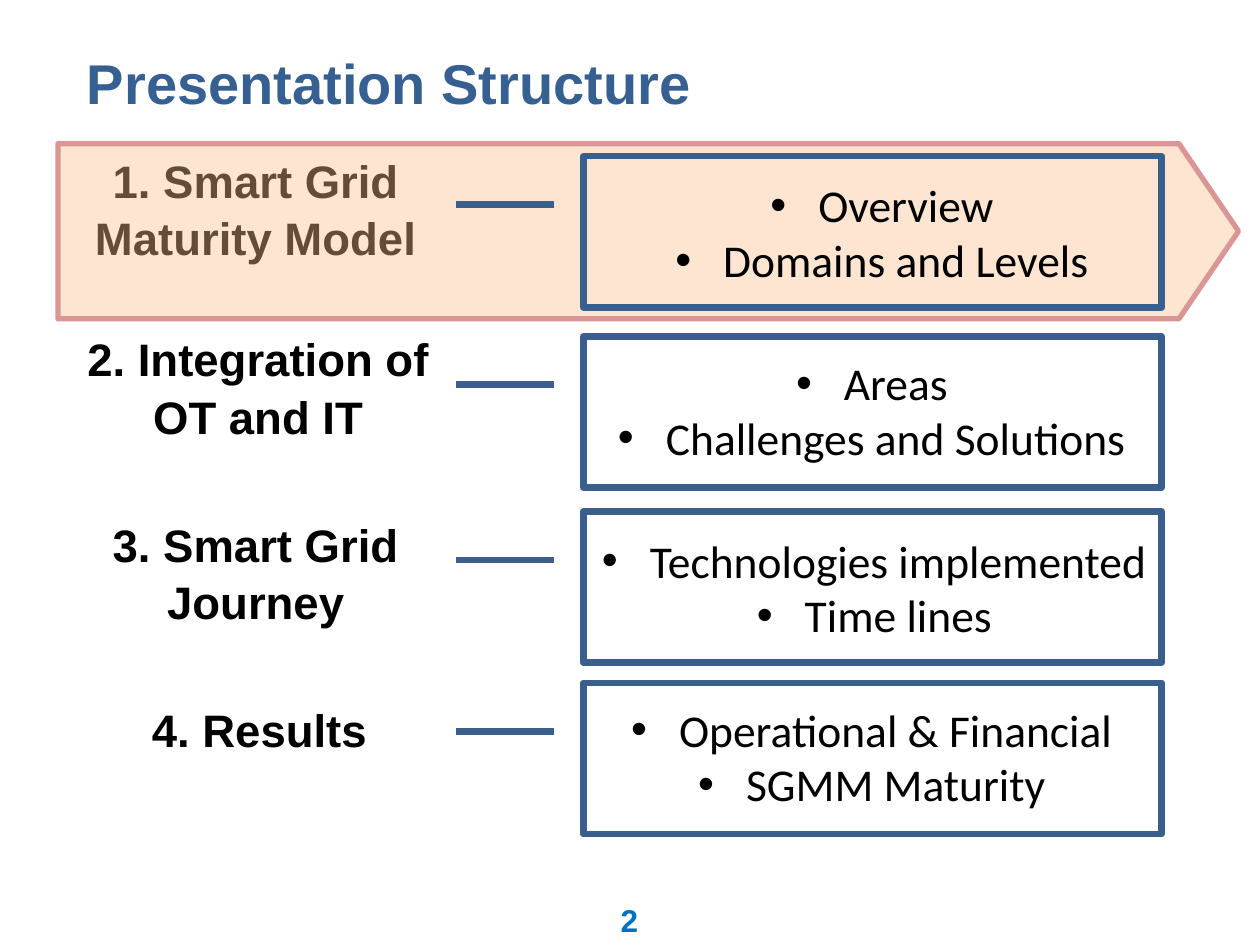
from dataclasses import dataclass

from lxml import etree
from pptx import Presentation
from pptx.dml.color import RGBColor
from pptx.enum.shapes import MSO_SHAPE
from pptx.enum.text import MSO_ANCHOR, MSO_AUTO_SIZE, PP_ALIGN
from pptx.oxml.ns import qn
from pptx.util import Inches, Pt

CALLOUT = MSO_SHAPE.LINE_CALLOUT_1
ARROW = MSO_SHAPE.PENTAGON
CENTER, LEFT = PP_ALIGN.CENTER, PP_ALIGN.LEFT
TOP, MIDDLE = MSO_ANCHOR.TOP, MSO_ANCHOR.MIDDLE
NO_FIT = MSO_AUTO_SIZE.NONE

SLIDE_W, SLIDE_H = Inches(10), Inches(7.5)
COLUMN, ROW = SLIDE_W / 100, SLIDE_H / 75

COLORS = {
    "title": "376092",
    "text": "000000",
    "page": "0070C0",
    "frame": "3A5F8C",
    "highlight": "FAC090",
    "highlight_edge": "D99694",
}


@dataclass(frozen=True)
class Area:
    column: float
    row: float
    columns: float
    rows: float

    def emu(self) -> tuple[int, int, int, int]:
        return (round(self.column * COLUMN), round(self.row * ROW),
                round(self.columns * COLUMN), round(self.rows * ROW))


@dataclass(frozen=True)
class TextStyle:
    font: str
    size: float
    color: str
    bold: bool = True
    align: PP_ALIGN = CENTER
    spacing: float = 1.0
    bulleted: bool = False


@dataclass(frozen=True)
class Section:
    label: tuple[str, ...]
    label_at: tuple[float, float]
    frame_row: float
    details: tuple[str, ...]
    details_at: tuple[float, float]


TITLE = TextStyle("Arial", 32, "title", align=LEFT)
LABEL = TextStyle("Arial", 26, "text", spacing=1.05)
DETAIL = TextStyle("Calibri", 26, "text", bold=False, bulleted=True)
PAGE = TextStyle("Arial", 18, "page")

SECTIONS = (
    Section(("1. Smart Grid Maturity Model",), (1.8, 11.4), 12.4,
            ("Overview", "Domains and Levels"), (46, 13.6)),
    Section(("2. Integration of", "OT and IT"), (2, 25.6), 26.7,
            ("Areas", "Challenges and Solutions"), (45.2, 27.7)),
    Section(("3. Smart Grid Journey",), (1.8, 40.3), 40.6,
            ("Technologies implemented", "Time lines"), (45.4, 41.8)),
    Section(("4. Results",), (2.1, 55), 54.2,
            ("Operational & Financial", "SGMM Maturity"), (45.2, 55.2)),
)


def rgb(name: str) -> RGBColor:
    return RGBColor.from_string(COLORS[name])


def place(shape, area: Area) -> None:
    shape.left, shape.top, shape.width, shape.height = area.emu()


def write(shape, lines: tuple[str, ...], style: TextStyle, anchor=TOP) -> None:
    frame = shape.text_frame
    frame.word_wrap = True
    frame.auto_size = NO_FIT
    frame.vertical_anchor = anchor
    frame.text = "\n".join(lines)
    for paragraph in frame.paragraphs:
        paragraph.alignment = style.align
        paragraph.line_spacing = style.spacing
        paragraph.space_before = Pt(0)
        properties = paragraph._p.get_or_add_pPr()
        properties.set("marL", str(Inches(0.5) if style.bulleted else 0))
        properties.set("indent", str(Inches(-0.38) if style.bulleted else 0))
        if style.bulleted:
            etree.SubElement(properties, qn("a:buFont"), typeface="Arial")
            etree.SubElement(properties, qn("a:buChar"), char="•")
        else:
            etree.SubElement(properties, qn("a:buNone"))
        font = paragraph.font
        font.name, font.size, font.bold = style.font, Pt(style.size), style.bold
        font.color.rgb = rgb(style.color)


def add_text(slide, area: Area, lines: tuple[str, ...], style: TextStyle, anchor=TOP) -> None:
    write(slide.shapes.add_textbox(*area.emu()), lines, style, anchor)


def add_outline(slide, preset, area: Area, adjustments: tuple[float, ...], color: str, width: float):
    shape = slide.shapes.add_shape(preset, *area.emu())
    shape.shadow.inherit = False
    for index, value in enumerate(adjustments):
        shape.adjustments[index] = value
    shape.fill.background()
    shape.line.color.rgb = rgb(color)
    shape.line.width = Pt(width)
    return shape


def add_highlight(slide) -> None:
    arrow = add_outline(slide, ARROW, Area(4.6, 11.4, 93.7, 13.9), (0.34,), "highlight_edge", 3)
    arrow.fill.solid()
    arrow.fill.fore_color.rgb = rgb("highlight")
    color = arrow._element.spPr.find(qn("a:solidFill"))[0]
    etree.SubElement(color, qn("a:alpha"), val="40000")


def add_label(slide, section: Section, placeholder=None) -> None:
    area = Area(*section.label_at, 37, 10)
    if placeholder is None:
        add_text(slide, area, section.label, LABEL)
    else:
        place(placeholder, area)
        write(placeholder, section.label, LABEL)


def add_details(slide, section: Section) -> None:
    add_outline(slide, CALLOUT, Area(46.3, section.frame_row, 45.9, 12),
                (0.32, -0.05, 0.32, -0.22), "frame", 3.75)
    add_text(slide, Area(*section.details_at, 46.8, 10), section.details, DETAIL)


def main() -> None:
    presentation = Presentation()
    presentation.slide_width, presentation.slide_height = SLIDE_W, SLIDE_H
    slide = presentation.slides.add_slide(presentation.slide_layouts[1])

    title = slide.shapes.title
    place(title, Area(5.9, 3, 90, 7))
    write(title, ("Presentation Structure",), TITLE, MIDDLE)
    add_text(slide, Area(38.3, 71, 23.3, 4), ("2",), PAGE, MIDDLE)

    first, *others = SECTIONS
    add_label(slide, first, slide.placeholders[1])
    add_highlight(slide)
    add_details(slide, first)
    for section in others:
        add_label(slide, section)
        add_details(slide, section)

    presentation.save("out.pptx")


if __name__ == "__main__":
    main()
